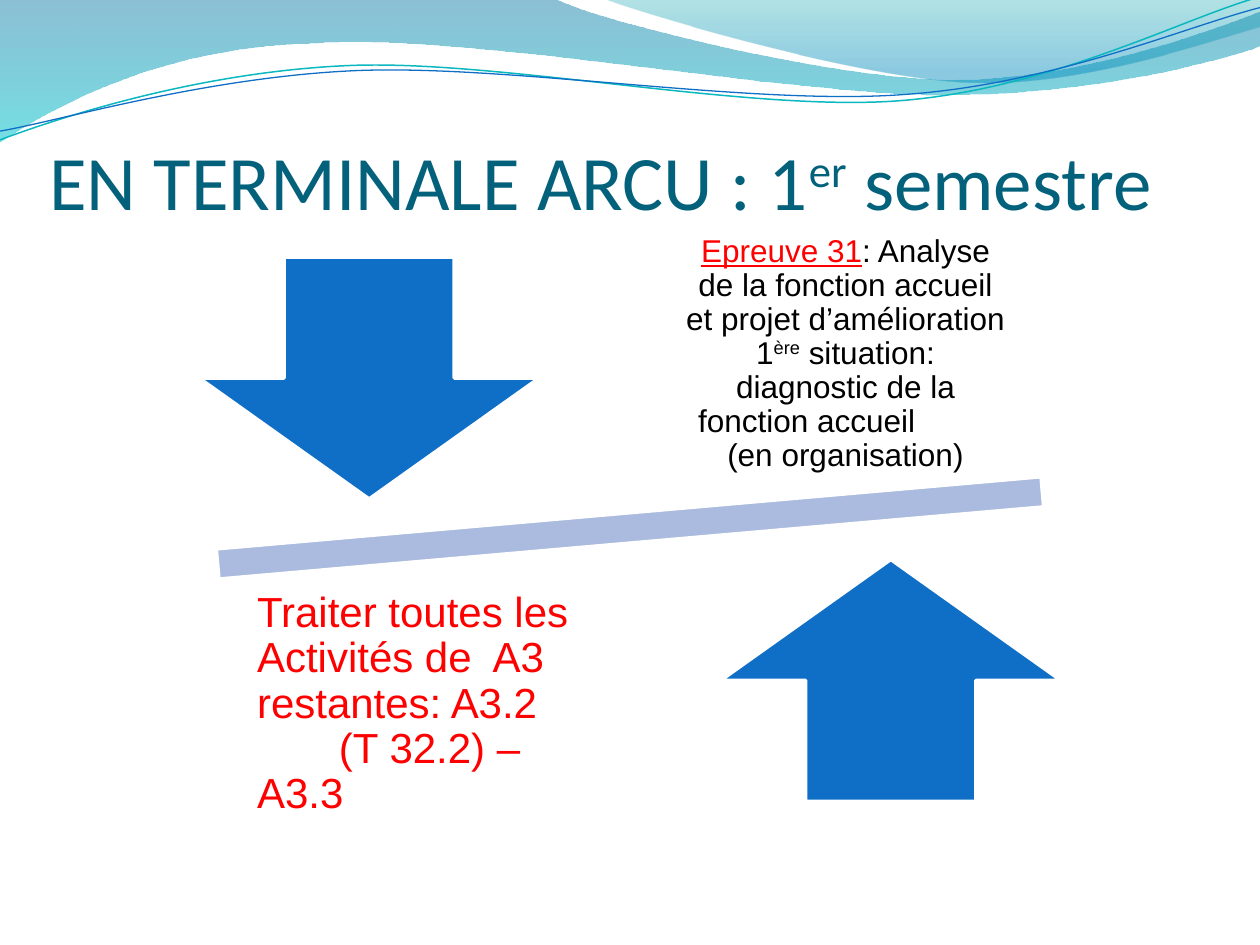
import math
from dataclasses import dataclass

from lxml import etree
from pptx import Presentation
from pptx.dml.color import RGBColor
from pptx.enum import shapes, text
from pptx.oxml.ns import qn
from pptx.util import Inches, Pt

SHAPE = shapes.MSO_SHAPE


@dataclass(frozen=True)
class Theme:
    title: str = "04617B"
    blue: str = "0F6FC6"
    teal: str = "0AB8BF"
    bar: str = "ABBBDF"
    red: str = "FF0000"
    black: str = "000000"
    white: str = "FFFFFF"
    # Gradient stops: position, colour, opacity in percent
    wave_fill: tuple = ((0, "0074A1", 45), (1, "00C6CF", 55))
    crest_fill: tuple = ((0, "00A1A9", 30), (0.8, "008BBF", 45))
    heading_font: str = "Calibri"
    body_font: str = "Arial"
    title_size: int = 44
    exam_size: int = 18
    task_size: int = 24


THEME = Theme()

# Outlines in inches: one point is a line end, three points are a Bézier curve
WAVE = [[(0, 0)], [(4.4, -0.01)],
        [(4.76, 0.17), (6.64, 0.63), (7.58, 0.63)],
        [(8.53, 0.63), (9.58, 0.26), (10, 0.09)], [(10.01, 0.36)],
        [(9.83, 0.44), (8.7, 0.76), (7.46, 0.75)],
        [(6.22, 0.75), (3.82, 0.28), (2.57, 0.34)],
        [(1.29, 0.36), (0.46, 0.83), (-0.01, 1.13)], [(0, 0)]]
CREST = [[(4.79, -0.01)],
         [(5.09, 0.11), (6.82, 0.62), (7.69, 0.65)],
         [(8.56, 0.69), (9.61, 0.32), (10, 0.21)], [(10, 0)], [(4.79, -0.01)]]
TEAL_LINE = [[(0, 1.11)],
             [(0.48, 0.93), (1.58, 0.57), (2.77, 0.52)],
             [(3.95, 0.47), (5.93, 0.89), (7.13, 0.8)],
             [(8.33, 0.71), (9.38, 0.15), (9.98, -0.02)]]
BLUE_LINE = [[(0, 1.04)],
             [(0.47, 0.96), (1.64, 0.61), (2.83, 0.56)],
             [(4.03, 0.51), (5.97, 0.84), (7.17, 0.75)],
             [(8.36, 0.67), (9.41, 0.21), (10, 0.06)]]
LINE_TILT = 2.7


def rgb(value):
    return RGBColor.from_string(value)


def turn(outline, degrees, center):
    (cx, cy), a = center, math.radians(degrees)
    return [[(cx + (x - cx) * math.cos(a) - (y - cy) * math.sin(a),
              cy + (x - cx) * math.sin(a) + (y - cy) * math.cos(a))
             for x, y in part] for part in outline]


def add_outline(s, left, top, outline, closed):
    """Build a freeform behind the title and give it true Bézier curves."""
    parts = [[(left + Inches(x), top + Inches(y)) for x, y in part] for part in outline]
    points = [point for part in parts for point in part]
    builder = s.shapes.build_freeform(*points[0])
    builder.add_line_segments(points[1:], close=closed)
    sp = builder.convert_to_shape()
    sp.shadow.inherit = False
    s.shapes.title.element.addprevious(sp.element)

    path = next(sp.element.iter(qn("a:path")))
    for child in list(path):
        path.remove(child)
    for i, part in enumerate(parts):
        tag = "a:moveTo" if i == 0 else "a:lnTo" if len(part) == 1 else "a:cubicBezTo"
        segment = etree.SubElement(path, qn(tag))
        for x, y in part:
            etree.SubElement(segment, qn("a:pt"), x=str(x - sp.left), y=str(y - sp.top))
    if closed:
        etree.SubElement(path, qn("a:close"))
    return sp


def fill_gradient(sp, stops):
    sp.fill.gradient()
    sp.fill.gradient_angle = 270
    for stop, (position, color, _) in zip(sp.fill.gradient_stops, stops):
        stop.position = position
        stop.color.rgb = rgb(color)
    for clr, (_, _, opacity) in zip(sp.element.iter(qn("a:srgbClr")), stops):
        etree.SubElement(clr, qn("a:alpha")).set("val", str(opacity * 1000))


def add_run(p, wording, *, size, color, font, underline=False, raised=False):
    r = p.add_run()
    r.text = wording
    r.font.size, r.font.name = Pt(size), font
    r.font.color.rgb = rgb(color)
    if underline:
        r.font.underline = True
    if raised:
        r._r.get_or_add_rPr().set("baseline", "30000")


def set_frame(tf, anchor, margins):
    tf.word_wrap = True
    tf.auto_size = text.MSO_AUTO_SIZE.NONE
    tf.vertical_anchor = anchor
    tf.margin_left, tf.margin_top, tf.margin_right, tf.margin_bottom = map(Inches, margins)


def add_shape(group, kind, left, top, width, height, color, rotation=0):
    sp = group.shapes.add_shape(kind, left, top, width, height)
    sp.shadow.inherit = False
    sp.fill.solid()
    sp.fill.fore_color.rgb = rgb(color)
    sp.line.color.rgb = rgb(THEME.white)
    sp.line.width = Pt(2)
    sp.rotation = rotation


def add_paragraph_box(group, left, top, width, height, margin, align, tab):
    tf = group.shapes.add_textbox(left, top, width, height).text_frame
    set_frame(tf, text.MSO_ANCHOR.MIDDLE, [margin] * 4)
    p = tf.paragraphs[0]
    p.alignment, p.line_spacing = align, 0.9
    tabs = etree.SubElement(p._p.get_or_add_pPr(), qn("a:tabLst"))
    etree.SubElement(tabs, qn("a:tab"), pos=str(Inches(tab)), algn="l")
    return p


def wave_header(s, left, top):
    for outline, stops in ((WAVE, THEME.wave_fill), (CREST, THEME.crest_fill)):
        sp = add_outline(s, left, top, outline, closed=True)
        fill_gradient(sp, stops)
        sp.line.fill.background()
    for outline, center, color, width in (
            (TEAL_LINE, (4.99, 0.58), THEME.teal, 0.85),
            (BLUE_LINE, (4.99, 0.59), THEME.blue, 0.75)):
        sp = add_outline(s, left, top, turn(outline, LINE_TILT, center), closed=False)
        sp.rotation = -LINE_TILT
        sp.fill.background()
        sp.line.color.rgb = rgb(color)
        sp.line.width = Pt(width)


def title_region(s, left, top, width, height):
    title = s.shapes.title
    title.left, title.top, title.width, title.height = left, top, width, height
    set_frame(title.text_frame, text.MSO_ANCHOR.BOTTOM, (0, 0.05, 0, 0))
    p = title.text_frame.paragraphs[0]
    p.alignment = text.PP_ALIGN.LEFT
    style = dict(size=THEME.title_size, color=THEME.title, font=THEME.heading_font)
    add_run(p, "EN TERMINALE ARCU : 1", **style)
    add_run(p, "er", raised=True, **style)
    add_run(p, " semestre", **style)


def balance_diagram(s, left, top, width, height):
    """Two opposed arrows and their texts on either side of a tilted bar."""
    group = s.shapes.add_group_shape()
    arrow_w, arrow_h = Inches(2.7), Inches(1.92)
    text_w, text_h = Inches(2.88), Inches(2.02)
    inset_x, inset_y = Inches(1.05), Inches(0.24)
    add_shape(group, SHAPE.MATH_MINUS, left, top + Inches(1.88), width, Inches(1.02),
              THEME.bar, rotation=355)
    add_shape(group, SHAPE.DOWN_ARROW, left + inset_x, top + inset_y,
              arrow_w, arrow_h, THEME.blue)

    p = add_paragraph_box(group, left + Inches(4.74), top, text_w, text_h, 0.14,
                          text.PP_ALIGN.CENTER, tab=2.34)
    style = dict(size=THEME.exam_size, font=THEME.body_font)
    add_run(p, "Epreuve 31", color=THEME.red, underline=True, **style)
    style["color"] = THEME.black
    add_run(p, ": Analyse de la fonction accueil et projet d’amélioration 1", **style)
    add_run(p, "ère", raised=True, **style)
    add_run(p, " situation: diagnostic de la fonction accueil\t", **style)
    p.add_line_break()
    add_run(p, "(en organisation)", **style)

    add_shape(group, SHAPE.UP_ARROW, left + width - inset_x - arrow_w,
              top + height - inset_y - arrow_h, arrow_w, arrow_h, THEME.blue)
    p = add_paragraph_box(group, left + Inches(1.32), top + height - text_h, text_w,
                          text_h, 0.19, text.PP_ALIGN.LEFT, tab=0.65)
    style = dict(size=THEME.task_size, color=THEME.red, font=THEME.body_font)
    add_run(p, "Traiter toutes les Activités de  A3 restantes: A3.2", **style)
    p.add_line_break()
    add_run(p, "\t(T 32.2) – A3.3", **style)


def main():
    prs = Presentation()
    prs.slide_width, prs.slide_height = Inches(10), Inches(7.5)
    s = prs.slides.add_slide(prs.slide_layouts[5])
    wave_header(s, 0, 0)
    title_region(s, Inches(0.39), Inches(0.7), Inches(9.11), Inches(1.09))
    balance_diagram(s, Inches(0.53), Inches(1.8), Inches(8.94), Inches(4.8))
    prs.save("out.pptx")


if __name__ == "__main__":
    main()
